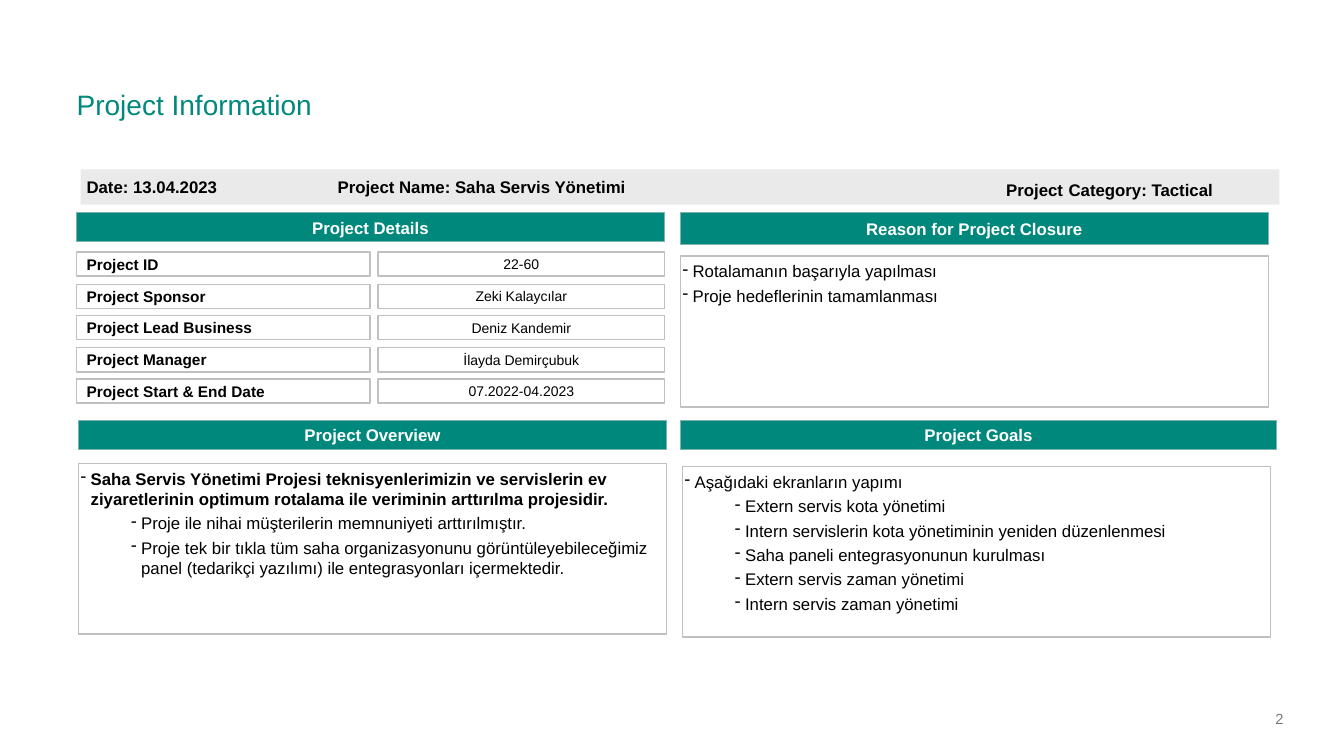
from lxml.etree import SubElement
from pptx import Presentation
from pptx.dml.color import RGBColor
from pptx.enum.shapes import MSO_SHAPE
from pptx.enum.text import MSO_ANCHOR, PP_ALIGN
from pptx.oxml.ns import qn
from pptx.util import Pt

PX = 9144  # 100 px to the inch
FONT = "Arial"
COLORS = {
    "teal": "00887D", "teal_edge": "7FB3AD", "band": "EAEAEA",
    "white": "FFFFFF", "grey": "C0C0C0", "black": "000000", "number": "777777",
}

TITLE = "Project Information"
PAGE_NUMBER = "2"
DATE_AND_NAME = "Date: 13.04.2023\tProject Name: Saha Servis Yönetimi"
CATEGORY = [("Project", 12), (" ", 14), ("Category: Tactical", 12)]
DETAILS = [
    ("Project ID", "22-60"),
    ("Project Sponsor", "Zeki Kalaycılar"),
    ("Project Lead Business", "Deniz Kandemir"),
    ("Project Manager", "İlayda Demirçubuk"),
    ("Project Start & End Date", "07.2022-04.2023"),
]
HEADERS = [
    ("Project Details", (76, 211, 583, 29)),
    ("Reason for Project Closure", (675, 211, 583, 32)),
    ("Project Overview", (78, 417, 583, 29)),
    ("Project Goals", (675, 417, 591, 29)),
]
# Each panel: place, then lines of (level, bold, wording)
PANELS = [
    ((675, 254, 583, 150), [
        (0, False, "Rotalamanın başarıyla yapılması"),
        (0, False, "Proje hedeflerinin tamamlanması"),
    ]),
    ((78, 460, 583, 169), [
        (0, True, "Saha Servis Yönetimi Projesi teknisyenlerimizin ve servislerin ev "
                  "ziyaretlerinin optimum rotalama ile veriminin arttırılma projesidir."),
        (1, False, "Proje ile nihai müşterilerin memnuniyeti arttırılmıştır."),
        (1, False, "Proje tek bir tıkla tüm saha organizasyonunu görüntüleyebileceğimiz "
                   "panel (tedarikçi yazılımı) ile entegrasyonları içermektedir."),
    ]),
    ((677, 463, 583, 169), [
        (0, False, "Aşağıdaki ekranların yapımı"),
        (1, False, "Extern servis kota yönetimi"),
        (1, False, "Intern servislerin kota yönetiminin yeniden düzenlenmesi"),
        (1, False, "Saha paneli entegrasyonunun kurulması"),
        (1, False, "Extern servis zaman yönetimi"),
        (1, False, "Intern servis zaman yönetimi"),
    ]),
]
ROW_TOP, ROW_PITCH, ROW_HEIGHT = 250, 31.6, 24
LABEL_LEFT, LABEL_WIDTH = 76, 291
VALUE_LEFT, VALUE_WIDTH = 375, 284
NAME_TAB = 249

deck = Presentation()
deck.slide_width, deck.slide_height = 1333 * PX, 750 * PX
slide = deck.slides.add_slide(deck.slide_layouts[6])


def emu(place):
    return [length * PX for length in place]


def color(name):
    return RGBColor.from_string(COLORS[name])


def set_frame(shape, insets, anchor):
    frame = shape.text_frame
    frame.word_wrap = True
    frame.margin_left, frame.margin_top, frame.margin_right, frame.margin_bottom = emu(insets)
    frame.vertical_anchor = anchor
    return frame


def add_box(place, fill, edge=None, edge_width=1):
    box = slide.shapes.add_shape(MSO_SHAPE.RECTANGLE, *emu(place))
    box.shadow.inherit = False
    box.fill.solid()
    box.fill.fore_color.rgb = color(fill)
    if edge:
        box.line.color.rgb = color(edge)
        box.line.width = Pt(edge_width)
    else:
        box.line.fill.background()
    return box


def add_run(paragraph, wording, size, ink="black", bold=False):
    run = paragraph.add_run()
    run.text = wording
    run.font.name, run.font.size, run.font.bold = FONT, Pt(size), bold
    run.font.color.rgb = color(ink)


def write_line(shape, wording, size, ink="black", bold=False, align=PP_ALIGN.LEFT,
               insets=(10, 5, 10, 5), anchor=MSO_ANCHOR.MIDDLE):
    paragraph = set_frame(shape, insets, anchor).paragraphs[0]
    paragraph.alignment = align
    add_run(paragraph, wording, size, ink, bold)
    return paragraph


def add_dash(paragraph, level):
    """Give the paragraph a hanging dash, indented by its level."""
    paragraph.level = level
    props = paragraph._p.get_or_add_pPr()
    props.set("marL", str((10 + 50 * level) * PX))
    props.set("indent", str(-10 * PX))
    bullet_color = SubElement(props, qn("a:buClr"))
    SubElement(bullet_color, qn("a:srgbClr"), val=COLORS["black"])
    SubElement(props, qn("a:buChar"), char="-")


title = slide.shapes.add_textbox(*emu((76, 77, 1189, 44)))
write_line(title, TITLE, 20, "teal", insets=(0, 0, 0, 0),
           anchor=MSO_ANCHOR.BOTTOM).line_spacing = 0.9
page_number = slide.shapes.add_textbox(*emu((1265, 693, 64, 40)))
write_line(page_number, PAGE_NUMBER, 10.5, "number", insets=(0, 5, 0, 5))

add_box((80, 168, 1189, 35), "band")
date_and_name = slide.shapes.add_textbox(*emu((76, 171, 701, 29)))
date_line = write_line(date_and_name, DATE_AND_NAME, 12, bold=True)
tabs = SubElement(date_line._p.get_or_add_pPr(), qn("a:tabLst"))
SubElement(tabs, qn("a:tab"), pos=str(NAME_TAB * PX), algn="l")

category = slide.shapes.add_textbox(*emu((998, 176, 256, 24)))
category_line = set_frame(category, (0, 0, 0, 0), MSO_ANCHOR.TOP).paragraphs[0]
for wording, size in CATEGORY:
    add_run(category_line, wording, size, bold=True)

for heading, place in HEADERS:
    write_line(add_box(place, "teal", "teal_edge", 0.75), heading, 12, "white",
               bold=True, align=PP_ALIGN.CENTER)

for row, (label, value) in enumerate(DETAILS):
    top = ROW_TOP + round(ROW_PITCH * row)
    label_box = add_box((LABEL_LEFT, top, LABEL_WIDTH, ROW_HEIGHT), "white", "grey")
    write_line(label_box, label, 11, bold=True)
    value_box = add_box((VALUE_LEFT, top, VALUE_WIDTH, ROW_HEIGHT), "white", "grey")
    write_line(value_box, value, 10, align=PP_ALIGN.CENTER)

for place, lines in PANELS:
    frame = set_frame(add_box(place, "white", "grey"), (2, 5, 0, 5), MSO_ANCHOR.TOP)
    for index, (level, bold, wording) in enumerate(lines):
        paragraph = frame.add_paragraph() if index else frame.paragraphs[0]
        paragraph.alignment = PP_ALIGN.LEFT
        add_dash(paragraph, level)
        if index:
            paragraph.space_before = Pt(3)
        add_run(paragraph, wording, 12, bold=bold)

deck.save("out.pptx")
